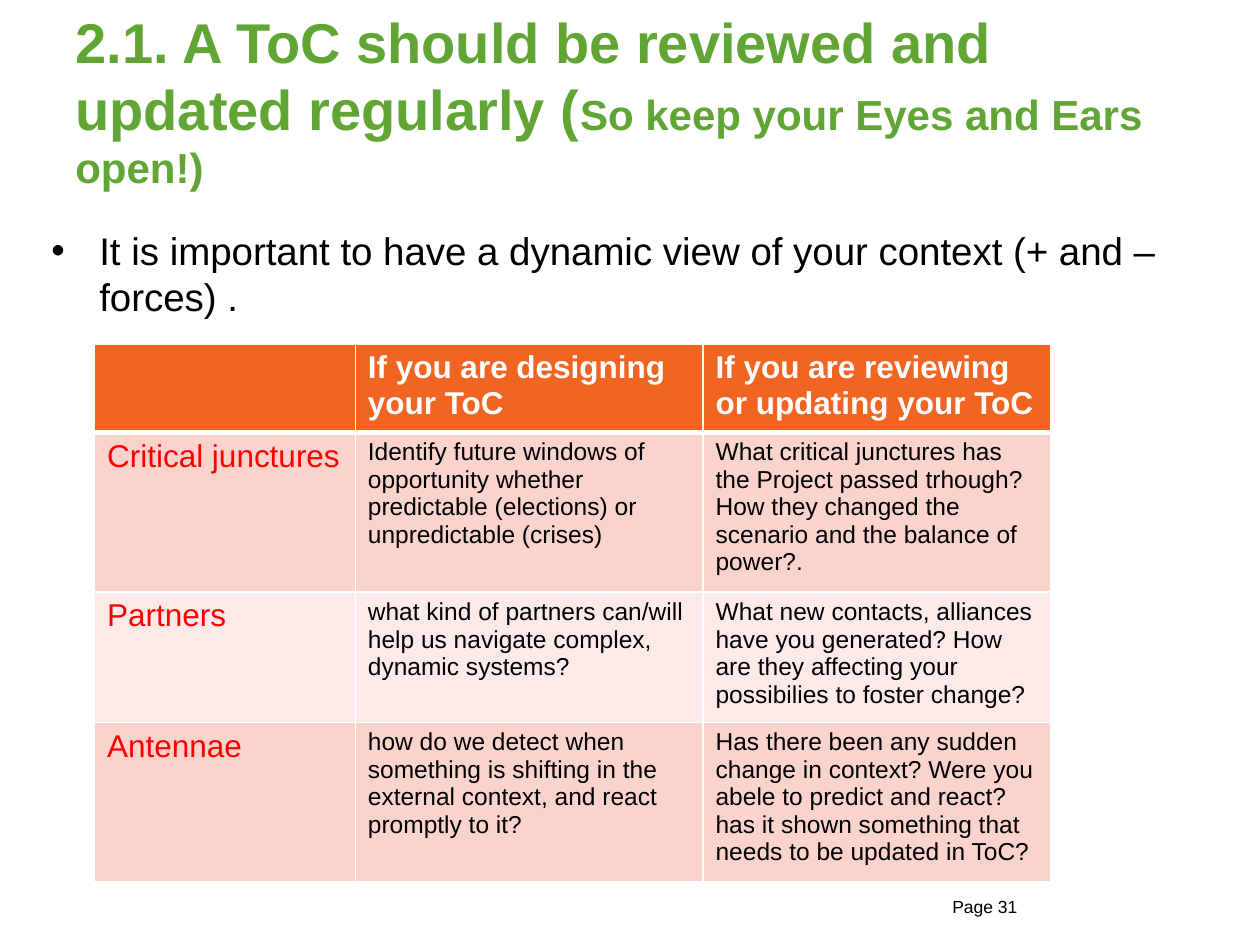
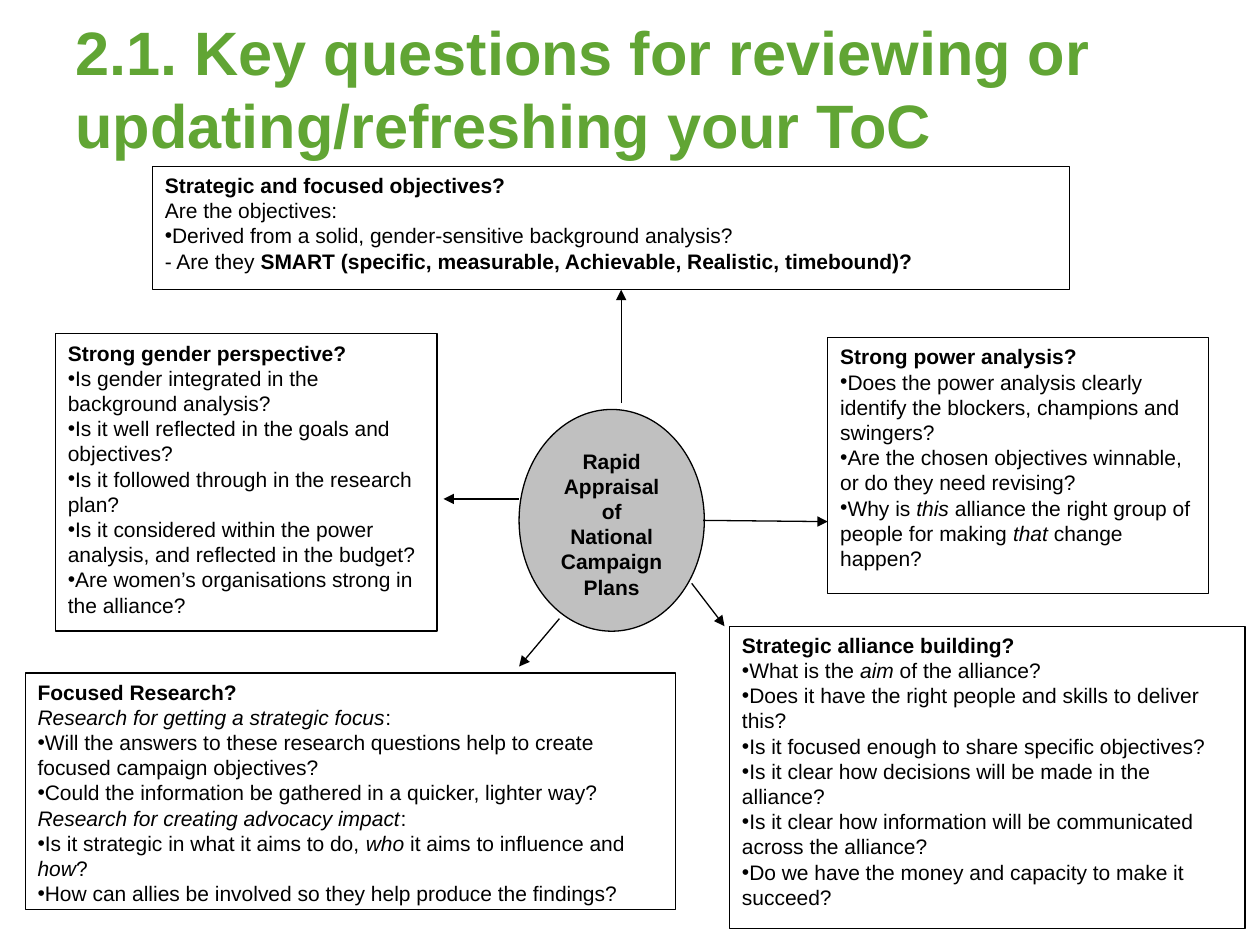
import lxml.etree
import pptx
import pptx.dml.color
import pptx.enum.shapes
import pptx.enum.text
import pptx.oxml.ns
import pptx.util

Inches = pptx.util.Inches
Pt = pptx.util.Pt
SHAPES = pptx.enum.shapes.MSO_SHAPE
ALIGN = pptx.enum.text.PP_ALIGN
ANCHOR = pptx.enum.text.MSO_ANCHOR

FONT = "Arial"
COLORS = {
    "title": "61A534",
    "text": "000000",
    "paper": "FFFFFF",
    "header": "F16422",
    "row_label": "FF0000",
    "band_dark": "FAD3CD",
    "band_light": "FCEAE8",
    "hub": "C0C0C0",
}

TOC_TABLE = [
    ["", "If you are designing your ToC", "If you are reviewing or updating your ToC"],
    ["Critical junctures",
     "Identify future windows of opportunity whether predictable (elections) "
     "or unpredictable (crises)",
     "What critical junctures has the Project passed trhough? How they changed "
     "the scenario and the balance of power?."],
    ["Partners",
     "what kind of partners can/will help us navigate complex, dynamic systems?",
     "What new contacts, alliances have you generated? How are they affecting "
     "your possibilies to foster change?"],
    ["Antennae",
     "how do we detect when something is shifting in the external context, "
     "and react promptly to it?",
     "Has there been any sudden change in context? Were you abele to predict and "
     "react? has it shown something that needs to be updated in ToC?"],
]
COLUMN_WIDTHS = [2.07, 2.76, 2.76]
ROW_HEIGHTS = [0.66, 1.19, 0.98, 1.19]

# (left, top, width, height), heading, lines: _italic_, *bold*, leading bullet
QUESTION_BOXES = [
    ((1.21, 1.32, 7.28, 0.98), "Strategic and focused objectives?", [
        "Are the objectives:",
        "•Derived from a solid, gender-sensitive background analysis?",
        "- Are they *SMART (specific, measurable, Achievable, Realistic, timebound)?*",
    ]),
    ((5.79, 4.97, 4.09, 2.4), "Strategic alliance building?", [
        "•What is the _aim_ of the alliance?",
        "•Does it have the right people and skills to deliver this?",
        "•Is it focused enough to share specific objectives?",
        "•Is it clear how decisions will be made in the alliance?",
        "•Is it clear how information will be communicated across the alliance?",
        "•Do we have the money and capacity to make it succeed?",
    ]),
    ((6.57, 2.68, 3.02, 2.03), "Strong power analysis?", [
        "•Does the power analysis clearly identify the blockers, champions and swingers?",
        "•Are the chosen objectives winnable, or do they need revising?",
        "•Why is _this_ alliance the right group of people for making _that_ change happen?",
    ]),
    ((0.2, 5.34, 5.16, 1.88), "Focused Research?", [
        "_Research for getting a strategic focus_:",
        "•Will the answers to these research questions help to create focused "
        "campaign objectives?",
        "•Could the information be gathered in a quicker, lighter way?",
        "_Research for creating advocacy impact_:",
        "•Is it strategic in what it aims to do, _who_ it aims to influence and _how_?",
        "•How can allies be involved so they help produce the findings?",
    ]),
    ((0.44, 2.65, 3.03, 2.36), "Strong gender perspective?", [
        "•Is gender integrated in the background analysis?",
        "•Is it well reflected in the goals and objectives?",
        "•Is it followed through in the research plan?",
        "•Is it considered within the power analysis, and reflected in the budget?",
        "•Are women’s organisations strong in the alliance?",
    ]),
]
HUB_BOX = (4.12, 3.25, 1.47, 1.76)
HUB_WORDS = ["Rapid", "Appraisal", "of", "National", "Campaign", "Plans"]
ARROWS = [
    (4.93, 3.2, 4.93, 2.3),
    (4.12, 3.96, 3.52, 3.96),
    (5.58, 4.13, 6.57, 4.14),
    (4.44, 4.91, 4.12, 5.29),
    (5.49, 4.63, 5.75, 4.97),
]


def rgb(name):
    return pptx.dml.color.RGBColor.from_string(COLORS[name])


def inches(values):
    return [Inches(v) for v in values]


def add_xml(parent, tag, **attributes):
    return lxml.etree.SubElement(parent, pptx.oxml.ns.qn(tag), **attributes)


def style(p, size, color="text", bold=False):
    p.font.name = FONT
    p.font.size = Pt(size)
    p.font.bold = bold
    p.font.color.rgb = rgb(color)


def add_run(p, text):
    r = p.add_run()
    r.text = text
    return r


def set_bullet(p, indent=0):
    """Hang a round bullet by indent inches."""
    pPr = p._p.get_or_add_pPr()
    pPr.set("marL", str(Inches(indent)))
    pPr.set("indent", str(-Inches(indent)))
    add_xml(pPr, "a:buFont", typeface=FONT)
    add_xml(pPr, "a:buChar", char="•")


def add_paragraphs(tf, count):
    return [tf.paragraphs[0]] + [tf.add_paragraph() for _ in range(count - 1)]


def add_text_box(slide, box, text, size, color="text", bold=False, bullet_indent=None):
    tf = slide.shapes.add_textbox(*inches(box)).text_frame
    tf.word_wrap = True
    p = tf.paragraphs[0]
    if bullet_indent is not None:
        set_bullet(p, bullet_indent)
    add_run(p, text)
    style(p, size, color, bold)
    return tf


def add_title(slide, height, text, size):
    tf = add_text_box(slide, (0.5, 0.3, 9, height), text, size, "title", True)
    tf.vertical_anchor = ANCHOR.MIDDLE
    return tf.paragraphs[0]


def add_outlined_shape(slide, kind, box, fill):
    sp = slide.shapes.add_shape(kind, *inches(box))
    sp.shadow.inherit = False
    sp.fill.solid()
    sp.fill.fore_color.rgb = rgb(fill)
    sp.line.color.rgb = rgb("text")
    sp.line.width = Pt(0.75)
    tf = sp.text_frame
    tf.word_wrap = True
    tf.vertical_anchor = ANCHOR.TOP
    return tf


def add_marked_runs(p, text):
    for i, part in enumerate(text.split("_")):
        for j, piece in enumerate(part.split("*")):
            if piece:
                r = add_run(p, piece)
                if i % 2:
                    r.font.italic = True
                if j % 2:
                    r.font.bold = True


def add_question_box(slide, box, heading, lines):
    tf = add_outlined_shape(slide, SHAPES.RECTANGLE, box, "paper")
    first, *rest = add_paragraphs(tf, len(lines) + 1)
    add_run(first, heading)
    style(first, 12, bold=True)
    first.alignment = ALIGN.LEFT
    for p, line in zip(rest, lines):
        if line.startswith("•"):
            set_bullet(p)
        style(p, 12)
        p.alignment = ALIGN.LEFT
        add_marked_runs(p, line.removeprefix("•"))


def add_hub(slide):
    tf = add_outlined_shape(slide, SHAPES.OVAL, HUB_BOX, "hub")
    for p, word in zip(add_paragraphs(tf, len(HUB_WORDS)), HUB_WORDS):
        add_run(p, word)
        style(p, 12, bold=True)
        p.alignment = ALIGN.CENTER


def add_arrow(slide, ends):
    line = slide.shapes.add_connector(
        pptx.enum.shapes.MSO_CONNECTOR.STRAIGHT, *inches(ends))
    line.line.color.rgb = rgb("text")
    line.line.width = Pt(0.75)
    add_xml(line.line._get_or_add_ln(), "a:tailEnd", type="triangle")
    add_xml(line._element.spPr, "a:effectLst")


def set_borders(cell, **widths):
    """Draw white borders; widths in points by side (L, R, T, B)."""
    tcPr = cell._tc.get_or_add_tcPr()
    for side, width in widths.items():
        ln = add_xml(tcPr, "a:ln" + side, w=str(Pt(width)))
        add_xml(add_xml(ln, "a:solidFill"), "a:srgbClr", val=COLORS["paper"])


def cell_style(row, col):
    """Return fill, text size, text colour and bold of a cell."""
    if row == 0:
        return "header", 18, "paper", True
    band = "band_dark" if row % 2 else "band_light"
    if col == 0:
        return band, 18, "row_label", False
    return band, 14, "text", False


def add_toc_table(slide):
    table = slide.shapes.add_table(
        len(ROW_HEIGHTS), len(COLUMN_WIDTHS),
        *inches((0.75, 2.73, sum(COLUMN_WIDTHS), sum(ROW_HEIGHTS)))).table
    for column, width in zip(table.columns, COLUMN_WIDTHS):
        column.width = Inches(width)
    for row, height in zip(table.rows, ROW_HEIGHTS):
        row.height = Inches(height)
    for i, texts in enumerate(TOC_TABLE):
        for j, text in enumerate(texts):
            cell = table.cell(i, j)
            fill, size, color, bold = cell_style(i, j)
            set_borders(cell, L=1, R=1, T=3 if i == 1 else 1, B=3 if i == 0 else 1)
            cell.fill.solid()
            cell.fill.fore_color.rgb = rgb(fill)
            p = cell.text_frame.paragraphs[0]
            if text:
                add_run(p, text)
            style(p, size, color, bold)


def build_review_slide(slide):
    add_text_box(slide, (7.46, 7.06, 1.34, 0.18), "Page 31", 10)
    title = add_title(slide, 0.98,
                      "2.1. A ToC should be reviewed and updated regularly (", 32)
    add_run(title, "So keep your Eyes and Ears open!)").font.size = Pt(24)
    add_text_box(
        slide, (0.31, 1.75, 9.38, 4.17),
        "It is important to have a dynamic view of your context (+ and – forces) .",
        22, bullet_indent=0.38)
    add_toc_table(slide)


def build_questions_slide(slide):
    add_title(slide, 0.79,
              "2.1. Key questions for reviewing or updating/refreshing your ToC", 35)
    for box, heading, lines in QUESTION_BOXES:
        add_question_box(slide, box, heading, lines)
    add_hub(slide)
    for ends in ARROWS:
        add_arrow(slide, ends)


def main():
    prs = pptx.Presentation()
    prs.slide_width = Inches(10)
    prs.slide_height = Inches(7.5)
    blank = prs.slide_layouts[6]
    for build in (build_review_slide, build_questions_slide):
        build(prs.slides.add_slide(blank))
    prs.save("out.pptx")


if __name__ == "__main__":
    main()
